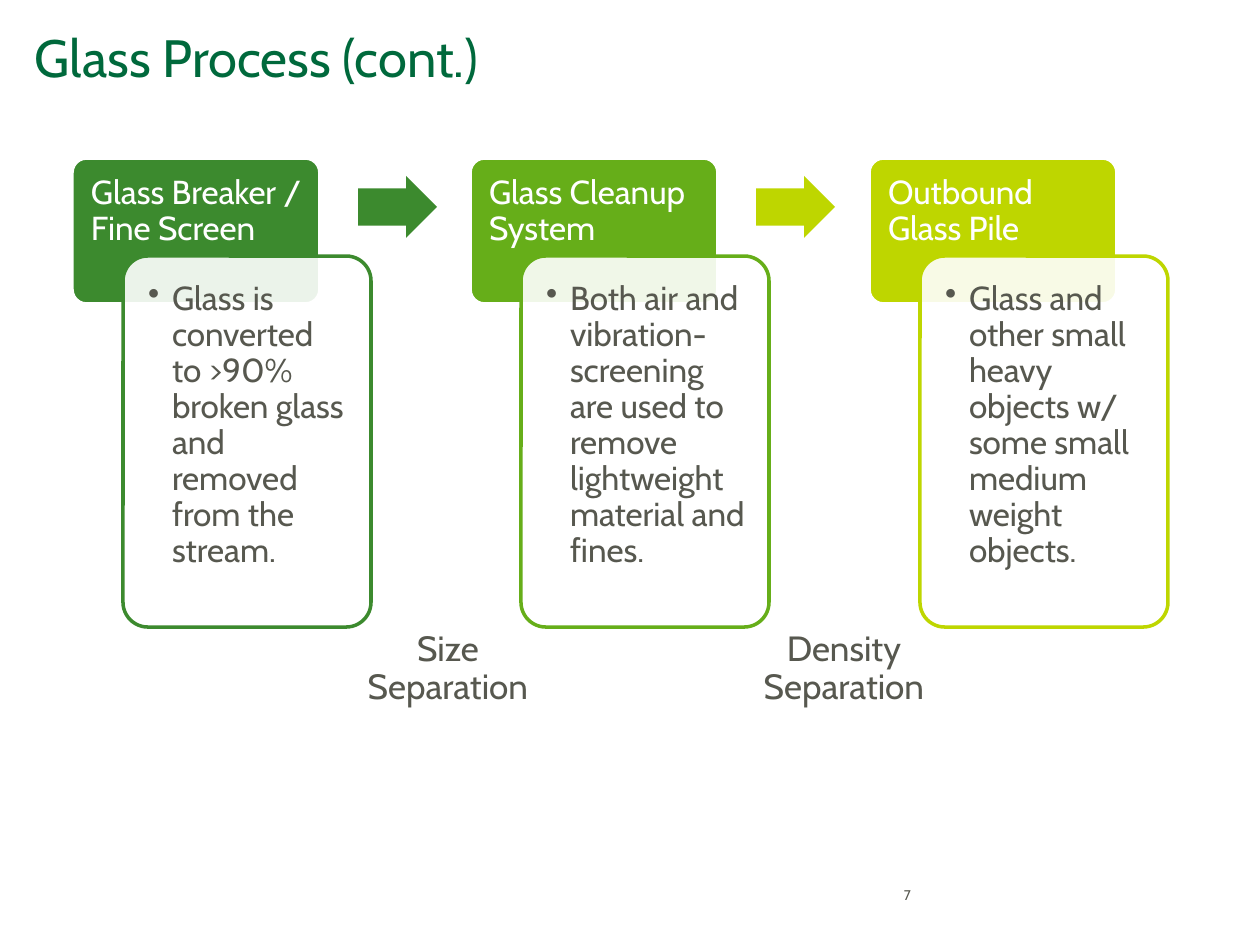
from lxml import etree
from pptx import Presentation
from pptx.dml.color import RGBColor
from pptx.enum.shapes import MSO_SHAPE as SHAPE
from pptx.enum.text import MSO_ANCHOR as ANCHOR, PP_ALIGN as ALIGN
from pptx.oxml.ns import qn
from pptx.util import Pt

PX = 914400 / 126
GREY, WHITE = "57584F", "FFFFFF"


def color(hex_code):
    return RGBColor.from_string(hex_code)


def add_text(box, text, size, ink, insets=(0, 0, 0, 0), bullet=False, **formats):
    label = slide.shapes.add_textbox(*[round(v * PX) for v in box])
    frame = label.text_frame
    frame.word_wrap = True
    for side, inset in zip(("left", "top", "right", "bottom"), insets):
        setattr(frame, "margin_" + side, round(inset * PX))
    frame.vertical_anchor = formats.pop("anchor", ANCHOR.TOP)
    paragraph = frame.paragraphs[0]
    paragraph.text = text
    for name, value in formats.items():
        setattr(paragraph, name, value)
    if bullet:
        props = paragraph._p.get_or_add_pPr()
        props.set("marL", str(round(24 * PX)))
        props.set("indent", str(round(-24 * PX)))
        etree.SubElement(props, qn("a:buChar")).set("char", "•")
    for font in (paragraph.font, paragraph.runs[0].font):
        for name, value in {"name": "Cabin", "size": Pt(size)}.items():
            setattr(font, name, value)
        font.color.rgb = color(ink)


def add_block(kind, box, fill, line, adjustments):
    block = slide.shapes.add_shape(kind, *[round(v * PX) for v in box])
    block.shadow.inherit = False
    block.fill.solid()
    block.fill.fore_color.rgb = color(fill)
    if line:
        block.line.color.rgb = color(line)
        block.line.width = Pt(2)
    else:
        block.line.fill.background()
    for i, value in enumerate(adjustments):
        block.adjustments[i] = value
    return block


deck = Presentation()
deck.slide_width, deck.slide_height = round(1260 * PX), round(945 * PX)
slide = deck.slides.add_slide(deck.slide_layouts[6])

add_text((35, 32, 1134, 134), "Glass Process (cont.)", 30, "00693C", line_spacing=0.9)
add_text((833, 883, 78, 20), "7", 8, GREY, anchor=ANCHOR.BOTTOM, alignment=ALIGN.RIGHT)

steps = [
    ("Glass Breaker / Fine Screen", "3C8A2E", "3C8A2E",
     "Glass is converted to >90% broken glass and removed from the stream."),
    ("Glass Cleanup System", "66AE19", "BED600",
     "Both air and vibration- screening are used to remove lightweight material and fines."),
    ("Outbound Glass Pile", "BED600", None,
     "Glass and other small heavy objects w/ some small medium weight objects."),
]
for i, (heading, green, arrow_green, detail) in enumerate(steps):
    left = 72 + round(398.5 * i)
    add_block(SHAPE.ROUNDED_RECTANGLE, (left, 158, 248, 146), green, WHITE, [0.1])
    add_text((left, 157, 248, 98), heading, 19, WHITE, (19, 19, 12, 10), line_spacing=0.9)
    card = add_block(SHAPE.ROUNDED_RECTANGLE, (left + 51, 256, 248, 371), WHITE, green, [0.1])
    card_fill = card._element.spPr.find(qn("a:solidFill"))[0]
    etree.SubElement(card_fill, qn("a:alpha")).set("val", "90000")
    add_text((left + 58, 263, 233, 357), detail, 19, GREY, (18, 19, 13, 19),
             bullet=True, line_spacing=0.9)
    if arrow_green:
        add_block(SHAPE.RIGHT_ARROW, (left + 286, 176, 79, 62), arrow_green, None, [0.6, 0.5])

for left, separation in ((755, "Density Separation"), (359, "Size Separation")):
    add_text((left, 631, 178, 78), separation, 20, GREY, alignment=ALIGN.CENTER, line_spacing=0.9)

deck.save("out.pptx")
